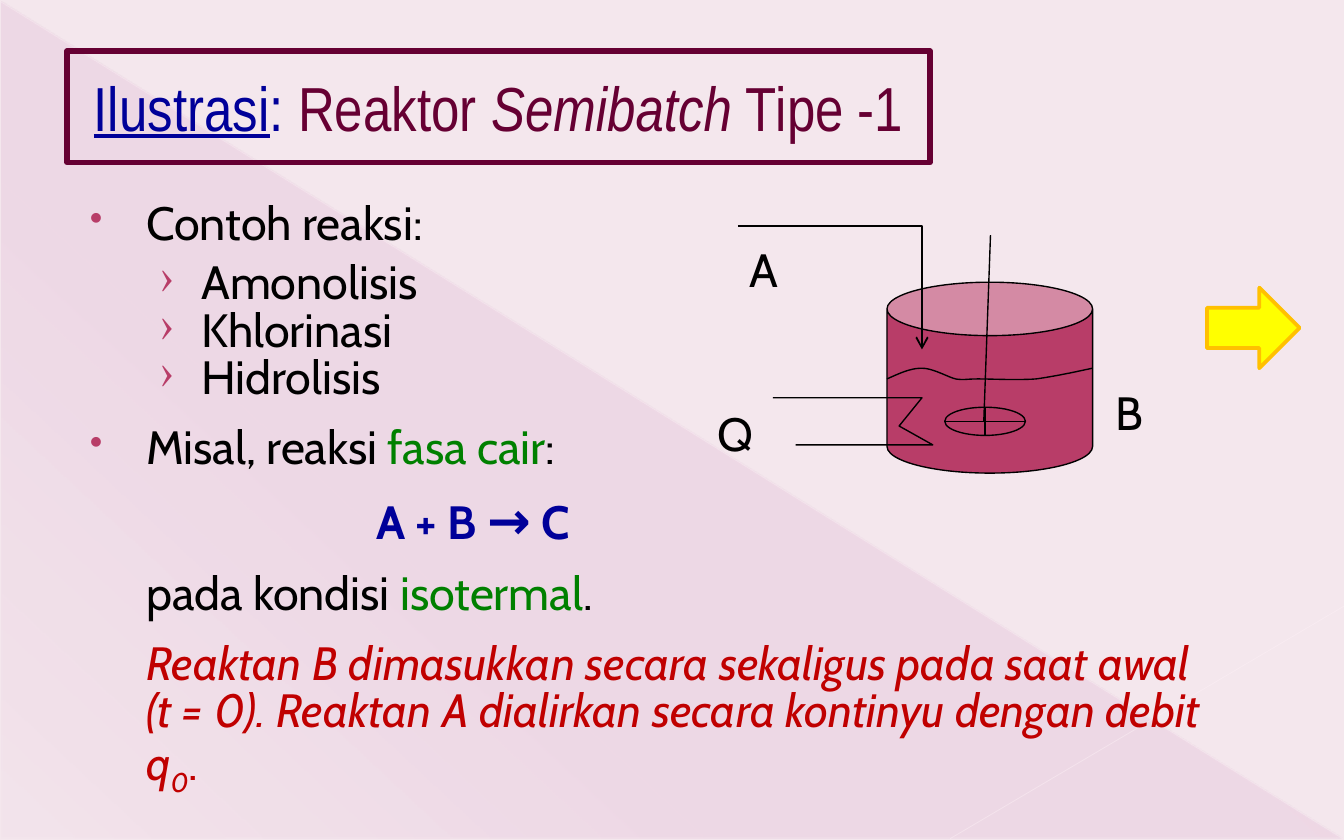
from dataclasses import dataclass

from lxml.etree import SubElement
from pptx import Presentation
from pptx.dml.color import RGBColor
from pptx.enum.shapes import MSO_CONNECTOR as Link, MSO_SHAPE as Preset
from pptx.enum.text import MSO_ANCHOR as Anchor, PP_ALIGN as Align
from pptx.oxml.ns import qn
from pptx.util import Inches, Pt

COLUMNS, ROWS = 100, 62.5  # square cells
CELL = Inches(10) // COLUMNS


@dataclass(frozen=True)
class Theme:
    background: str = "F4E7ED"
    veil: str = "B13F9A"
    ray: str = "FDF0F6"
    plum: str = "660033"
    rose: str = "B83D68"
    navy: str = "000099"
    green: str = "008000"
    red: str = "C00000"
    ink: str = "000000"
    yellow: str = "FFFF00"
    amber: str = "FFC000"
    title_font: str = "Arial Narrow"
    body_font: str = "Cabin"
    title_size: float = 33.3
    body_size: float = 25
    arrow_size: float = 28
    thin: float = 0.75


THEME = Theme()


def grid(*cells):
    return [round(cell * CELL) for cell in cells]


def rgb(code):
    return RGBColor.from_string(code)


def add_xml(parent, tag, **attributes):
    return SubElement(parent, qn(tag), {key: str(value) for key, value in attributes.items()})


def add_alpha(color_element, percent):
    add_xml(color_element, "a:alpha", val=percent * 1000)


def style(shape, fill=None, line=None, width=THEME.thin):
    shape.shadow.inherit = False
    if fill:
        shape.fill.solid()
        shape.fill.fore_color.rgb = rgb(fill)
    else:
        shape.fill.background()
    if line:
        shape.line.color.rgb = rgb(line)
        shape.line.width = Pt(width)
    else:
        shape.line.fill.background()


def add_preset(slide, preset, box, **look):
    shape = slide.shapes.add_shape(preset, *grid(*box))
    style(shape, **look)
    return shape


def add_line(slide, start, end, color=THEME.ink, width=THEME.thin, opacity=100):
    line = slide.shapes.add_connector(Link.STRAIGHT, *grid(*start, *end))
    line.line.color.rgb = rgb(color)
    line.line.width = Pt(width)
    if opacity < 100:
        add_alpha(line.line._get_or_add_ln().find(".//" + qn("a:srgbClr")), opacity)
    add_xml(line._element.spPr, "a:effectLst")


def add_path(slide, points, width=THEME.thin, arrow=False):
    """Draw an open outline through grid points."""
    first, *others = [grid(*point) for point in points]
    builder = slide.shapes.build_freeform(*first)
    builder.add_line_segments(others, close=False)
    outline = builder.convert_to_shape()
    style(outline, line=THEME.ink, width=width)
    if arrow:
        add_xml(outline.line._get_or_add_ln(), "a:tailEnd", type="arrow")


def bezier(start, curves, steps=12):
    """Return points along joined cubic curves."""
    points = [start]
    for c1, c2, end in curves:
        for step in range(1, steps + 1):
            t = step / steps
            u = 1 - t
            points.append(tuple(
                u**3 * a + 3 * u * u * t * b + 3 * u * t * t * c + t**3 * d
                for a, b, c, d in zip(start, c1, c2, end)))
        start = end
    return points


def add_run(paragraph, text, color=THEME.ink, font=THEME.body_font, size=THEME.body_size,
            bold=False, italic=False, underline=False, subscript=False):
    run = paragraph.add_run()
    run.text = text
    run.font.name, run.font.size = font, Pt(size)
    run.font.color.rgb = rgb(color)
    run.font.bold, run.font.italic, run.font.underline = bold, italic, underline
    if subscript:
        run.font._element.set("baseline", "-25000")


def add_paragraph(frame, runs, left, hanging=0, bullet=None, bullet_size=100,
                  before=0, after=0):
    used = frame.paragraphs[0].runs
    paragraph = frame.add_paragraph() if used else frame.paragraphs[0]
    paragraph.line_spacing = 0.85
    paragraph.space_before, paragraph.space_after = Pt(before), Pt(after)
    properties = paragraph._p.get_or_add_pPr()
    properties.set("marL", str(Inches(left)))
    properties.set("indent", str(-Inches(hanging)))
    if bullet:
        add_xml(add_xml(properties, "a:buClr"), "a:srgbClr", val=THEME.rose)
        add_xml(properties, "a:buSzPct", val=bullet_size * 1000)
        add_xml(properties, "a:buChar", char=bullet)
    else:
        add_xml(properties, "a:buNone")
    for text, look in runs:
        add_run(paragraph, text, **look)


def add_backdrop(slide):
    slide.background.fill.solid()
    slide.background.fill.fore_color.rgb = rgb(THEME.background)
    veil = add_preset(slide, Preset.RIGHT_TRIANGLE, (0.1, 0.1, COLUMNS - 0.2, ROWS - 0.2))
    veil.fill.gradient()
    veil.fill.gradient_angle = 0
    gradient = veil._element.spPr.find(qn("a:gradFill"))
    gradient.find(qn("a:lin")).set("ang", str(133 * 60000))
    stops = gradient.find(qn("a:gsLst"))
    for stop in list(stops):
        stops.remove(stop)
    for position, opacity in ((0, 10), (70, 8), (100, 1)):
        stop = add_xml(stops, "a:gs", pos=position * 1000)
        add_alpha(add_xml(stop, "a:srgbClr", val=THEME.veil), opacity)
    add_line(slide, (0, 0.1), (99.9, 62.4), THEME.ray, 0.39, 35)
    add_line(slide, (COLUMNS, 45.1), (70.7, 62.4), THEME.ray, 0.47, 45)


def add_title(slide):
    box = slide.shapes.add_textbox(*grid(5, 3.8, 64.2, 8.3))
    style(box, line=THEME.plum, width=3)
    frame = box.text_frame
    frame.word_wrap = True
    frame.vertical_anchor = Anchor.MIDDLE
    heading = frame.paragraphs[0]
    heading.alignment = Align.CENTER
    for text, look in (
        ("Ilustrasi", {"color": THEME.navy, "underline": True}),
        (": ", {"color": THEME.navy}),
        ("Reaktor ", {"color": THEME.plum}),
        ("Semibatch", {"color": THEME.plum, "italic": True}),
        (" Tipe -1", {"color": THEME.plum}),
    ):
        add_run(heading, text, font=THEME.title_font, size=THEME.title_size, **look)


def add_explanation(slide):
    frame = slide.shapes.add_textbox(*grid(5, 14.6, 86.7, 45)).text_frame
    frame.word_wrap = True
    topic = {"left": 0.49, "hanging": 0.42, "bullet": "•", "bullet_size": 80}
    example = {"left": 0.9, "hanging": 0.31, "bullet": "›", "bullet_size": 95}
    green = {"color": THEME.green}
    formula = {"color": THEME.navy, "bold": True}
    remark = {"color": THEME.red, "italic": True}

    add_paragraph(frame, [("Contoh reaksi:", {})], after=6, **topic)
    for reaction in ("Amonolisis", "Khlorinasi", "Hidrolisis"):
        add_paragraph(frame, [(reaction, {})], **example)
    add_paragraph(frame, [("Misal, reaksi ", {}), ("fasa cair", green), (":", {})],
                  before=12, **topic)
    add_paragraph(frame, [("A + B ", formula), ("→", {**formula, "size": THEME.arrow_size}),
                          (" C", formula)], left=2.2, before=12, after=12)
    add_paragraph(frame, [("pada kondisi ", {}), ("isotermal", green), (".", {})],
                  left=0.49, after=12)
    add_paragraph(frame, [
        ("Reaktan B dimasukkan secara sekaligus pada saat awal (t = 0). "
         "Reaktan A dialirkan secara kontinyu dengan debit q", remark),
        ("0", {**remark, "subscript": True}),
        (".", {"color": THEME.red}),
    ], left=0.49)


def add_label(slide, text, left, top):
    frame = slide.shapes.add_textbox(*grid(left, top, 4.7, 6.7)).text_frame
    frame.word_wrap = False
    add_run(frame.paragraphs[0], text)


def add_reactor(slide):
    solid = {"fill": THEME.rose, "line": THEME.ink}
    vessel = add_preset(slide, Preset.CAN, (66, 21, 15.3, 14.2), **solid)
    vessel.adjustments[0] = 0.28
    add_preset(slide, Preset.FLOWCHART_OR, (70.3, 30.3, 6, 2.1), **solid)
    add_line(slide, (73.2, 31.4), (73.7, 17.5))
    add_path(slide, [(54.9, 16.8), (68.6, 16.8), (68.6, 26)], width=1, arrow=True)
    add_path(slide, bezier((66, 28.2), [
        ((66.9, 27.8), (67.7, 27.4), (68.6, 27.4)),
        ((69.4, 27.4), (70.4, 28), (71.1, 28.2)),
        ((71.8, 28.3), (71.8, 28.2), (72.8, 28.2)),
        ((73.8, 28.2), (75.7, 28.3), (77.1, 28.2)),
        ((78.5, 28), (79.9, 27.7), (81.3, 27.4)),
    ]))
    add_path(slide, [(57.5, 29.6), (68.6, 29.6), (66.9, 31.7), (69.4, 33.1), (59.2, 33.1)])
    for text, left, top in (("A", 54.8, 17.4), ("B", 82, 28.1), ("Q", 52.4, 29.6)):
        add_label(slide, text, left, top)


def main():
    deck = Presentation()
    deck.slide_width, deck.slide_height = grid(COLUMNS, ROWS)
    slide = deck.slides.add_slide(deck.slide_layouts[6])
    add_backdrop(slide)
    add_title(slide)
    add_explanation(slide)
    add_reactor(slide)
    add_preset(slide, Preset.RIGHT_ARROW, (89.8, 21.4, 6.9, 6),
               fill=THEME.yellow, line=THEME.amber, width=2)
    deck.save("out.pptx")


if __name__ == "__main__":
    main()
